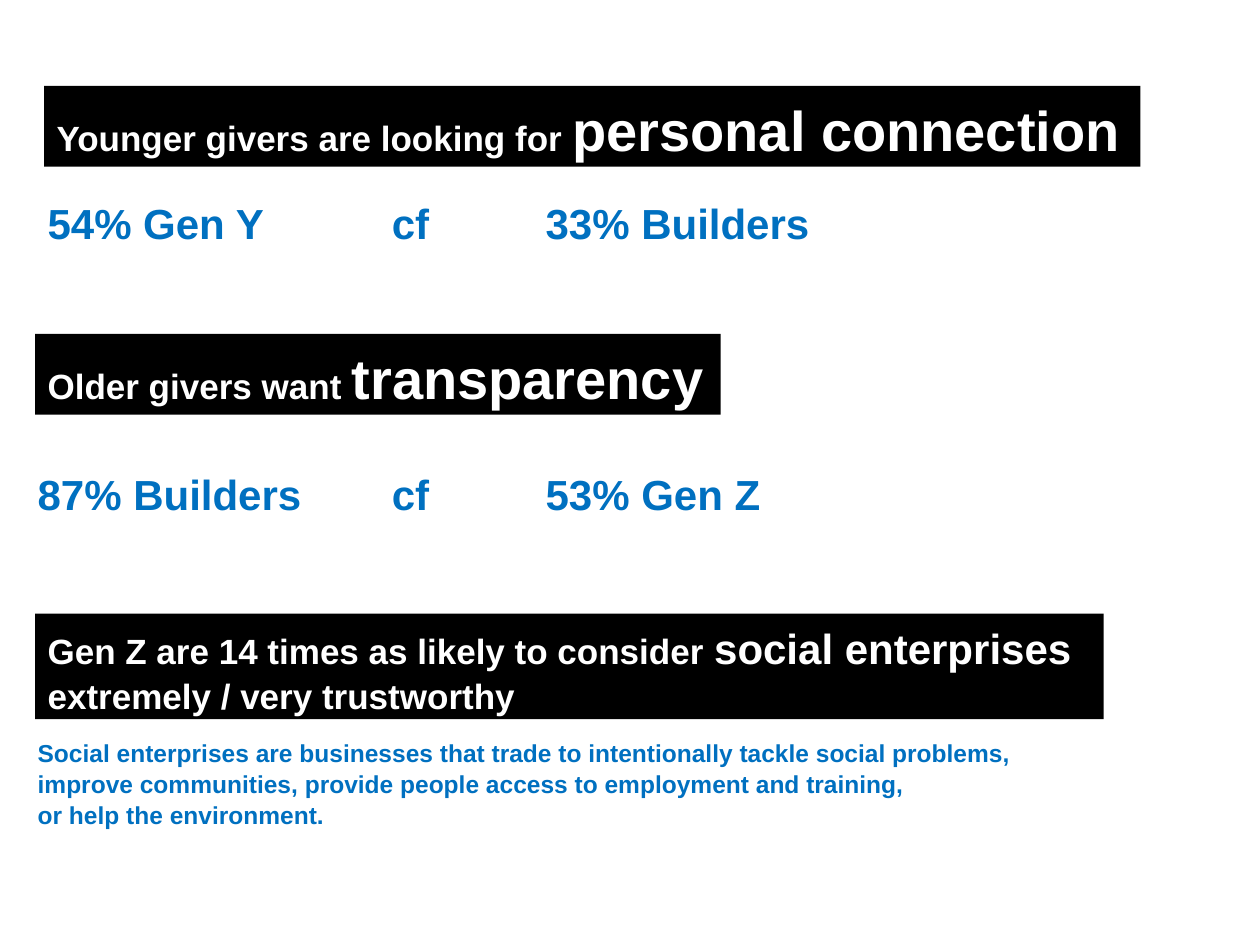
from dataclasses import dataclass

from lxml.etree import SubElement
from pptx import Presentation
from pptx.dml.color import RGBColor
from pptx.enum.shapes import MSO_SHAPE
from pptx.enum.text import MSO_ANCHOR, PP_ALIGN
from pptx.oxml.ns import qn
from pptx.util import Cm, Pt

COLORS = {"bar": "000000", "bar_text": "FFFFFF", "detail": "0070C0"}
FONT = "Arial"
LINE_SPACING = 1.05
INSET = 0.25  # cm, side margin inside each box
COMPARISON_COLUMNS = (7.9, 11.0)  # cm from the slide's left edge


@dataclass(frozen=True)
class Box:
    left: float
    top: float
    width: float
    height: float

    def lengths(self):
        return Cm(self.left), Cm(self.top), Cm(self.width), Cm(self.height)


@dataclass(frozen=True)
class Words:
    text: str
    size: int


@dataclass(frozen=True)
class Headline:
    box: Box
    lines: tuple[tuple[Words, ...], ...]


@dataclass(frozen=True)
class Comparison:
    box: Box
    first: str
    second: str


HEADLINES = (
    Headline(Box(0.89, 1.73, 22.1, 1.63), (
        (Words("Younger givers are looking for ", 20), Words("personal connection", 32)),
    )),
    Headline(Box(0.71, 6.73, 13.82, 1.63), (
        (Words("Older givers want ", 20), Words("transparency", 32)),
    )),
    Headline(Box(0.71, 12.37, 21.54, 2.13), (
        (Words("Gen Z are 14 times as likely to consider ", 20), Words("social enterprises", 24)),
        (Words("extremely / very trustworthy", 20),),
    )),
)

COMPARISONS = (
    Comparison(Box(0.71, 3.07, 15.98, 2.06), "54% Gen Y", "33% Builders"),
    Comparison(Box(0.51, 8.53, 15.27, 2.06), "87% Builders", "53% Gen Z"),
)

DEFINITION_BOX = Box(0.51, 14.73, 20.32, 2.82)
DEFINITION = (
    "Social enterprises are businesses that trade to intentionally tackle social problems,",
    "improve communities, provide people access to employment and training,",
    "or help the environment.",
)


def write_lines(frame, lines, color: str, anchor=MSO_ANCHOR.TOP) -> None:
    """Fill a text frame, one paragraph per line and one run per Words."""
    frame.word_wrap = True
    frame.vertical_anchor = anchor
    frame.margin_left = frame.margin_right = Cm(INSET)
    for index, line in enumerate(lines):
        paragraph = frame.paragraphs[0] if index == 0 else frame.add_paragraph()
        paragraph.alignment = PP_ALIGN.LEFT
        paragraph.line_spacing = LINE_SPACING
        for words in line:
            run = paragraph.add_run()
            run.text = words.text
            run.font.name = FONT
            run.font.size = Pt(words.size)
            run.font.bold = True
            run.font.color.rgb = RGBColor.from_string(COLORS[color])


def draw_headline(slide, headline: Headline) -> None:
    bar = slide.shapes.add_shape(MSO_SHAPE.RECTANGLE, *headline.box.lengths())
    bar.shadow.inherit = False
    bar.fill.solid()
    bar.fill.fore_color.rgb = RGBColor.from_string(COLORS["bar"])
    bar.line.fill.background()
    write_lines(bar.text_frame, headline.lines, "bar_text")


def draw_comparison(slide, comparison: Comparison) -> None:
    frame = slide.shapes.add_textbox(*comparison.box.lengths()).text_frame
    row = Words(f"{comparison.first}\tcf\t{comparison.second}", 24)
    write_lines(frame, ((row,),), "detail", MSO_ANCHOR.BOTTOM)
    # Tab stops line up the columns of both comparisons
    properties = frame.paragraphs[0]._p.get_or_add_pPr()
    tab_list = SubElement(properties, qn("a:tabLst"))
    for column in COMPARISON_COLUMNS:
        position = Cm(column - comparison.box.left - INSET)
        SubElement(tab_list, qn("a:tab"), pos=str(int(position)), algn="l")


def main() -> None:
    presentation = Presentation()
    presentation.slide_width, presentation.slide_height = Cm(25.4), Cm(19.05)
    slide = presentation.slides.add_slide(presentation.slide_layouts[6])

    # Figures under the first two headlines
    for comparison in COMPARISONS:
        draw_comparison(slide, comparison)

    # Definition under the third headline
    definition = slide.shapes.add_textbox(*DEFINITION_BOX.lengths())
    write_lines(definition.text_frame, [(Words(line, 14),) for line in DEFINITION], "detail")

    # Black headline bars
    for headline in HEADLINES:
        draw_headline(slide, headline)

    presentation.save("out.pptx")


if __name__ == "__main__":
    main()
